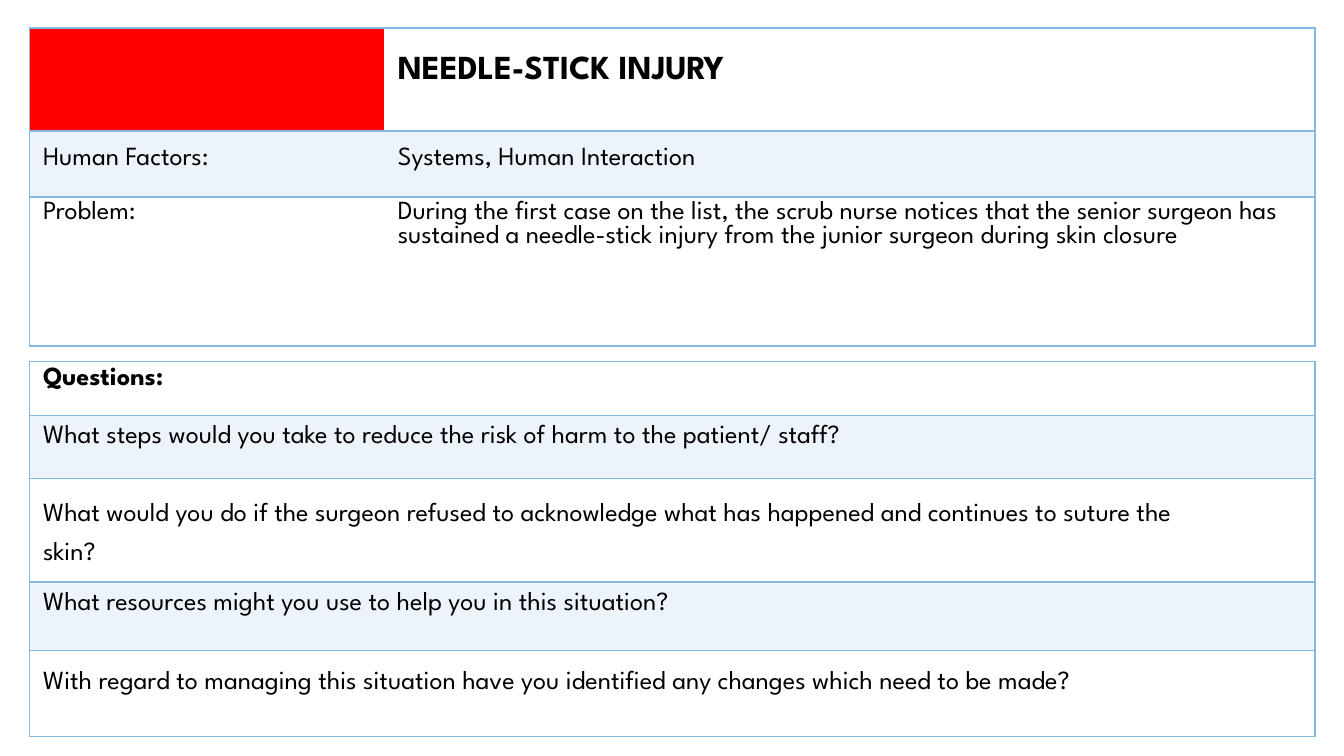
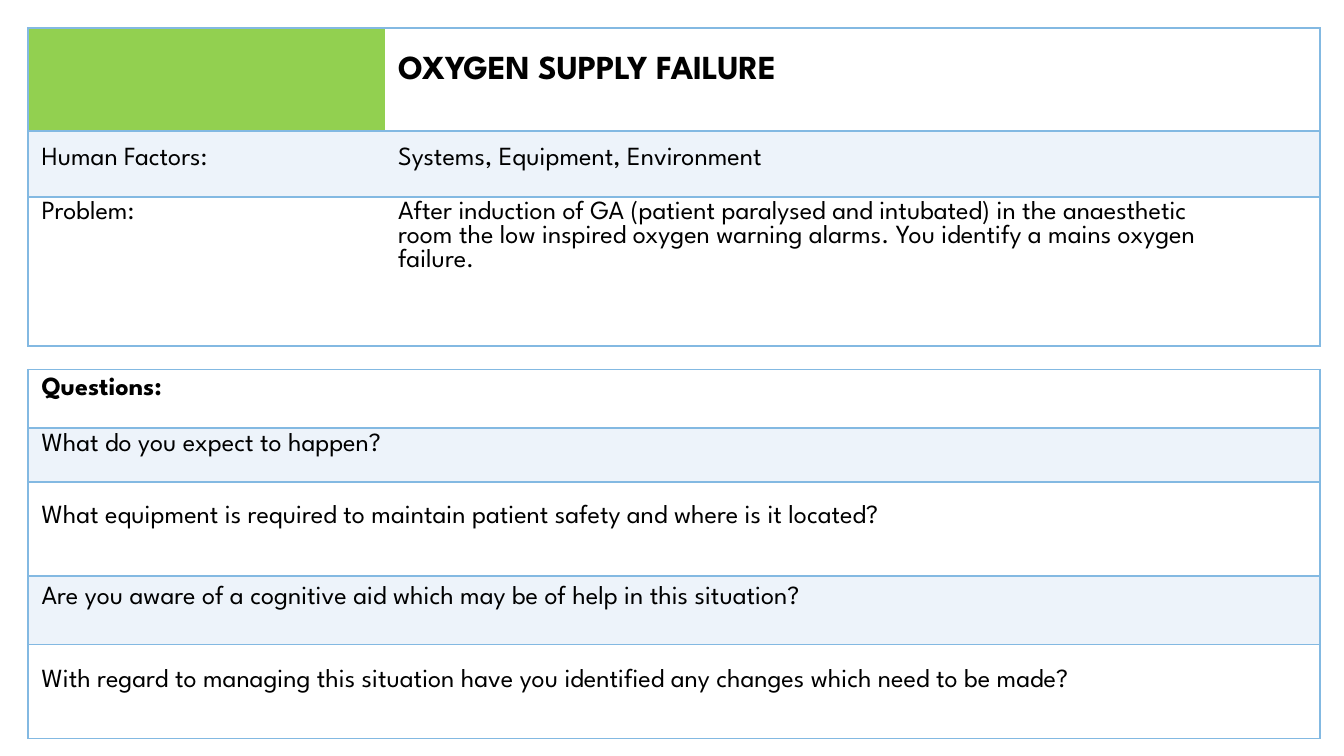
import dataclasses

import lxml.etree
import pptx
import pptx.dml.color
import pptx.oxml.ns
import pptx.util

# Grid of 1000 columns over a 16:9 slide; rows use the same unit
COLS = 1000
WIDE = pptx.util.Inches(10)
HIGH = WIDE * 9 // 16
UNIT = WIDE // COLS
SPLIT = 0.276  # share of the label column


@dataclasses.dataclass(frozen=True)
class Theme:
    font: str = "League Spartan"
    ink: str = "000000"
    line: str = "83B9E2"
    band: str = "EDF3FA"
    plain: str = "FFFFFF"
    head: int = 18
    body: int = 14
    rule: int = 1
    lead: int = 21


THEME = Theme()

# Rows of the top table: height, space above the text
TOP_ROWS = [(76.5, 21), (49, 12), (111, 3)]

CARDS = [
    dict(
        left=22, width=956.5, tag="FF0000",
        title="NEEDLE-STICK INJURY", track=-5,
        factors="Systems, Human Interaction",
        problem="During the first case on the list, the scrub nurse notices that the "
                "senior surgeon has sustained a needle-stick injury from the junior "
                "surgeon during skin closure",
        inset=0, ask_top=269,
        asks=[
            (40, 4, "Questions:"),
            (47, 7, "What steps would you take to reduce the risk of harm to the "
                    "patient/ staff?"),
            (77, 7, "What would you do if the surgeon refused to acknowledge what has "
                    "happened and continues to suture the skin?"),
            (51, 8, "What resources might you use to help you in this situation?"),
            (64, 4, "With regard to managing this situation have you identified any "
                    "changes which need to be made?"),
        ],
    ),
    dict(
        left=21, width=961, tag="92D050",
        title="OXYGEN SUPPLY FAILURE", track=-15,
        factors="Systems, Equipment, Environment",
        problem="After induction of GA (patient paralysed and intubated) in the "
                "anaesthetic room the low inspired oxygen warning alarms. You identify "
                "a mains oxygen failure.",
        inset=80, ask_top=275,
        asks=[
            (43.5, 6, "Questions:"),
            (40, 4, "What do you expect to happen?"),
            (70, 6, "What equipment is required to maintain patient safety and where "
                    "is it located?"),
            (51, 8, "Are you aware of a cognitive aid which may be of help in this "
                    "situation?"),
            (70, 7, "With regard to managing this situation have you identified any "
                    "changes which need to be made?"),
        ],
    ),
]


def span(units):
    return round(units * UNIT)


def paint(color):
    return pptx.dml.color.RGBColor.from_string(color)


def edge(cell, sides):
    """Draw the named sides of a cell and clear the others."""
    props = cell._tc.get_or_add_tcPr()
    for spot, side in enumerate("LRTB"):
        line = lxml.etree.Element(pptx.oxml.ns.qn("a:ln" + side))
        props.insert(spot, line)
        if side in sides:
            line.set("w", str(pptx.util.Pt(THEME.rule)))
            fill = lxml.etree.SubElement(line, pptx.oxml.ns.qn("a:solidFill"))
            lxml.etree.SubElement(fill, pptx.oxml.ns.qn("a:srgbClr"), val=THEME.line)
        else:
            lxml.etree.SubElement(line, pptx.oxml.ns.qn("a:noFill"))


def fill_cell(cell, text, fill, sides, top=0, right=0, size=THEME.body,
              bold=False, lead=None, track=0):
    edge(cell, sides)
    cell.fill.solid()
    cell.fill.fore_color.rgb = paint(fill)
    pads = dict(margin_left=10, margin_top=top, margin_right=right, margin_bottom=0)
    for name, pad in pads.items():
        setattr(cell, name, span(pad))
    if not text:
        return
    para = cell.text_frame.paragraphs[0]
    if lead:
        para.line_spacing = pptx.util.Pt(lead)
    run = para.add_run()
    run.text = text
    looks = dict(name=THEME.font, size=pptx.util.Pt(size), bold=bold)
    for name, value in looks.items():
        setattr(run.font, name, value)
    run.font.color.rgb = paint(THEME.ink)
    if track:
        run._r.get_or_add_rPr().set("spc", str(track))


def add_grid(slide, box, shares, rows):
    """Add a plain table in box (left, top, width) with the given rows."""
    left, top, width = box
    frame = slide.shapes.add_table(
        len(rows), len(shares), span(left), span(top), span(width), span(sum(rows)))
    table = frame.table
    table.first_row = table.horz_banding = False
    for col, share in zip(table.columns, shares):
        col.width = span(width * share)
    for row, height in zip(table.rows, rows):
        row.height = span(height)
    return table


def add_top(slide, box, card):
    """Colour tag and title, then factors and problem."""
    table = add_grid(slide, box, (SPLIT, 1 - SPLIT), [high for high, _ in TOP_ROWS])
    texts = [("", card["title"]),
             ("Human Factors:", card["factors"]),
             ("Problem:", card["problem"])]
    fills = [(card["tag"], THEME.plain), (THEME.band,) * 2, (THEME.plain,) * 2]
    looks = [dict(size=THEME.head, bold=True, track=card["track"]),
             {}, dict(right=card["inset"])]
    for row, (_, gap) in enumerate(TOP_ROWS):
        for col, sides in enumerate(("LTB", "RTB")):
            look = looks[row] if col else {}
            fill_cell(table.cell(row, col), texts[row][col], fills[row][col],
                      sides, top=gap, **look)


def add_asks(slide, box, asks):
    """Heading and banded questions; even rows have wide leading."""
    table = add_grid(slide, box, (1,), [high for high, _, _ in asks])
    for row, (_, gap, text) in enumerate(asks):
        wide = row > 0 and row % 2 == 0
        fill_cell(table.cell(row, 0), text, THEME.band if row % 2 else THEME.plain,
                  "LRTB", top=gap, right=80 if wide else 0, bold=row == 0,
                  lead=THEME.lead if wide else None)


def add_card(deck, card):
    slide = deck.slides.add_slide(deck.slide_layouts[6])
    left, width = card["left"], card["width"]
    add_top(slide, (left, 21, width), card)
    add_asks(slide, (left, card["ask_top"], width), card["asks"])


def main():
    deck = pptx.Presentation()
    deck.slide_width, deck.slide_height = WIDE, HIGH
    for card in CARDS:
        add_card(deck, card)
    deck.save("out.pptx")


if __name__ == "__main__":
    main()
